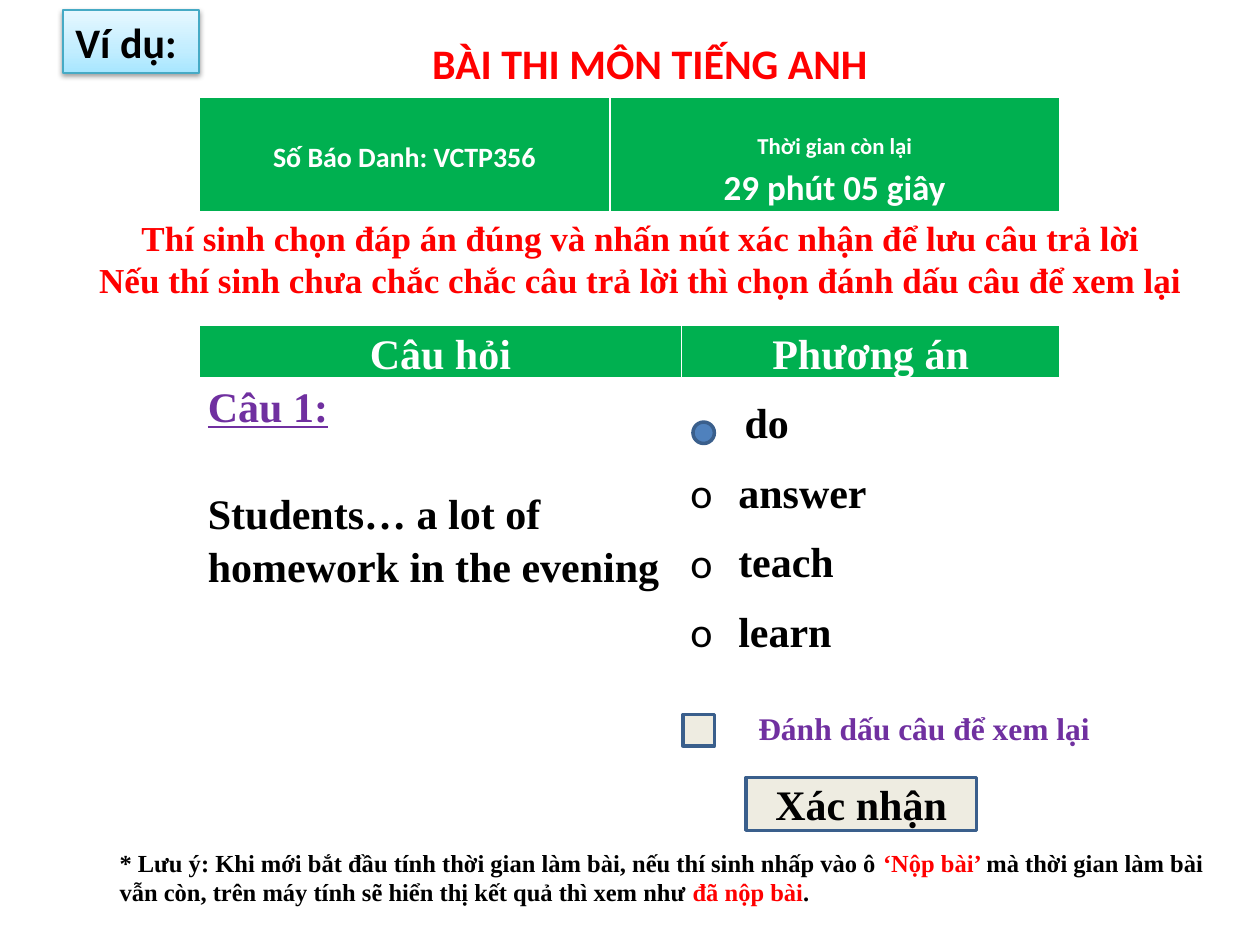
from copy import deepcopy
from dataclasses import dataclass

from lxml.etree import SubElement
from pptx import Presentation
from pptx.dml.color import RGBColor
from pptx.enum.shapes import MSO_SHAPE as Shape
from pptx.enum.text import MSO_ANCHOR as Anchor, MSO_AUTO_SIZE as AutoSize, PP_ALIGN as Align
from pptx.oxml.ns import qn
from pptx.util import Inches, Pt


@dataclass(frozen=True)
class Theme:
    sans: str = "Calibri"
    serif: str = "Times New Roman"
    white: str = "FFFFFF"
    black: str = "000000"
    red: str = "FF0000"
    green: str = "00B050"
    purple: str = "7030A0"
    beige: str = "EEECE1"
    blue: str = "4F81BD"
    outline: str = "3A5F8C"
    badge_line: str = "46AAC5"
    badge_stops: tuple = ((0, "A7E6FF"), (0.35, "C1EDFF"), (1, "E7F8FF"))
    large: int = 24
    medium: int = 20
    label: int = 18
    candidate: int = 16
    note: int = 14
    small: int = 13


def apply(target, values):
    for name, value in values.items():
        setattr(target, name, value)


def rgb(color):
    return RGBColor.from_string(color)


def line(*spans, bullet=None, indent=None, **layout):
    return {"spans": spans, "bullet": bullet, "indent": indent, "layout": layout}


class SlideBuilder:
    def __init__(self, page, theme):
        self.page = page
        self.theme = theme

    def span(self, text, size, color=None, font=None, **extra):
        return {
            "text": text,
            "color": color or self.theme.black,
            "font": {"size": Pt(size), "name": font or self.theme.serif, "bold": True, **extra},
        }

    def fill_text(self, frame, lines):
        for index, entry in enumerate(lines):
            para = frame.add_paragraph() if index else frame.paragraphs[0]
            apply(para, entry["layout"])
            if entry["indent"]:
                properties = para._p.get_or_add_pPr()
                properties.set("marL", str(Inches(entry["indent"])))
                if entry["bullet"]:
                    properties.set("indent", str(-Inches(entry["indent"])))
                    SubElement(properties, qn("a:buFont")).set("typeface", self.theme.sans)
                    SubElement(properties, qn("a:buChar")).set("char", entry["bullet"])
            for item in entry["spans"]:
                span = para.add_run()
                span.text = item["text"]
                apply(span.font, item["font"])
                span.font.color.rgb = rgb(item["color"])

    def place(self, box, area):
        apply(box, dict(zip(("left", "top", "width", "height"), map(Inches, area))))

    def title(self, area, *lines):
        box = self.page.shapes.title
        self.place(box, area)
        apply(box.text_frame, {"vertical_anchor": Anchor.TOP, "auto_size": AutoSize.SHAPE_TO_FIT_TEXT})
        self.fill_text(box.text_frame, lines)

    def text(self, area, *lines):
        box = self.page.shapes.add_textbox(*map(Inches, area))
        apply(box.text_frame, {"word_wrap": True, "auto_size": AutoSize.SHAPE_TO_FIT_TEXT})
        self.fill_text(box.text_frame, lines)

    def shape(self, kind, area, fill, outline, width, *lines, anchor=Anchor.MIDDLE):
        box = self.page.shapes.add_shape(kind, *map(Inches, area))
        box.shadow.inherit = False
        box.fill.solid()
        box.fill.fore_color.rgb = rgb(fill)
        box.line.color.rgb = rgb(outline)
        box.line.width = Pt(width)
        box.text_frame.vertical_anchor = anchor
        self.fill_text(box.text_frame, lines)
        return box

    def badge(self, area, *lines):
        theme = self.theme
        box = self.shape(Shape.RECTANGLE, area, theme.white, theme.badge_line, 0.75, *lines, anchor=Anchor.TOP)
        box.fill.gradient()
        box.fill.gradient_angle = 90
        stops = box._element.spPr.find(".//" + qn("a:gsLst"))
        stops.append(deepcopy(stops[-1]))
        for stop, (position, color) in zip(box.fill.gradient_stops, theme.badge_stops):
            stop.position = position
            stop.color.rgb = rgb(color)
        shadow = SubElement(box._element.spPr.find(qn("a:effectLst")), qn("a:outerShdw"))
        for name, value in {"blurRad": Pt(3.1), "dist": Pt(1.6), "dir": 90 * 60000, "rotWithShape": 0}.items():
            shadow.set(name, str(value))
        color = SubElement(shadow, qn("a:srgbClr"), val=theme.black)
        SubElement(color, qn("a:alpha"), val="38000")

    def borders(self, cell):
        properties = cell._tc.get_or_add_tcPr()
        for index, (side, width) in enumerate({"lnL": 1, "lnR": 1, "lnT": 1, "lnB": 3}.items()):
            border = properties.makeelement(qn("a:" + side), {"w": str(Pt(width))})
            fill = SubElement(border, qn("a:solidFill"))
            SubElement(fill, qn("a:srgbClr"), val=self.theme.white)
            properties.insert(index, border)

    def table(self, area, widths, fill, cells, tops=(0, 0)):
        table = self.page.shapes.add_table(1, len(widths), *map(Inches, area)).table
        apply(table, {"first_row": False, "horz_banding": False})
        for index, (width, lines) in enumerate(zip(widths, cells)):
            table.columns[index].width = Inches(width)
            cell = table.cell(0, index)
            apply(cell, {
                "margin_left": Inches(0.07), "margin_right": Inches(0.07),
                "margin_top": Inches(tops[index]), "margin_bottom": 0,
            })
            cell.fill.solid()
            cell.fill.fore_color.rgb = rgb(fill)
            self.borders(cell)
            self.fill_text(cell.text_frame, lines)


def main():
    theme = Theme()
    deck = Presentation()
    apply(deck, {"slide_width": Inches(10), "slide_height": Inches(7.5)})
    page = deck.slides.add_slide(deck.slide_layouts[5])
    build = SlideBuilder(page, theme)
    span = build.span
    left, width = 1.58, 6.83
    question_columns = (3.83, 3)
    centered = {"alignment": Align.CENTER}
    header = {**centered, "line_spacing": 1.15}

    build.badge((0.5, 0.08, 1.08, 0.5),
                line(span("Ví dụ:", theme.large, font=theme.sans), alignment=Align.LEFT))
    build.title((3.33, 0.25, 3.92, 0.5),
                line(span("BÀI THI MÔN TIẾNG ANH", theme.large, theme.red, theme.sans), alignment=Align.LEFT))

    candidate, caption, clock = (
        line(span(text, size, theme.white, theme.sans), **header)
        for text, size in (
            ("Số Báo Danh: VCTP356", theme.candidate),
            ("Thời gian còn lại", theme.small),
            ("29 phút 05 giây", theme.medium),
        )
    )
    build.table((left, 0.77, width, 0.92), (3.26, 3.57), theme.green,
                [[candidate], [caption, clock]], tops=(0.31, 0.25))

    build.text((0.67, 1.67, 8.83, 0.77), *(
        line(span(text, theme.medium, theme.red), **centered)
        for text in (
            "Thí sinh chọn đáp án đúng và nhấn nút xác nhận để lưu câu trả lời",
            "Nếu thí sinh chưa chắc chắc câu trả lời thì chọn đánh dấu câu để xem lại",
        )
    ))

    build.table((left, 2.58, width, 0.46), question_columns, theme.green, [
        [line(span(text, theme.large, theme.white), **header)] for text in ("Câu hỏi", "Phương án")
    ])
    question = [
        line(span("Câu 1:", theme.large, theme.purple, underline=True), line_spacing=1.15),
        line(span("Students… a lot of homework in the evening", theme.large),
             line_spacing=1.15, space_before=Pt(30.5)),
    ]
    answers = [line(span("do", theme.large), indent=0.43, line_spacing=1.5)]
    answers += [
        line(span(text, theme.large), bullet="o", indent=0.38, line_spacing=1.5)
        for text in ("answer", "teach", "learn")
    ]
    build.table((left, 3, width, 2.4), question_columns, theme.white, [question, answers])

    build.shape(Shape.RECTANGLE, (5.42, 5.67, 0.25, 0.25), theme.beige, theme.outline, 2)
    build.text((5.92, 5.58, 3.17, 0.4), line(span("Đánh dấu câu để xem lại", theme.label, theme.purple)))
    build.shape(Shape.RECTANGLE, (5.92, 6.17, 1.83, 0.42), theme.beige, theme.outline, 2,
                line(span("Xác nhận", theme.large), **centered))
    build.shape(Shape.OVAL, (5.5, 3.35, 0.17, 0.17), theme.blue, theme.outline, 2)

    build.text((0.85, 6.68, 8.92, 0.57), line(*(
        span(text, theme.note, color)
        for text, color in (
            ("* Lưu ý: Khi mới bắt đầu tính thời gian làm bài, nếu thí sinh nhấp vào ô ", theme.black),
            ("‘Nộp bài’ ", theme.red),
            ("mà thời gian làm bài vẫn còn, trên máy tính sẽ hiển thị kết quả thì xem như ", theme.black),
            ("đã nộp bài", theme.red),
            (".", theme.black),
        )
    )))
    deck.save("out.pptx")


if __name__ == "__main__":
    main()
